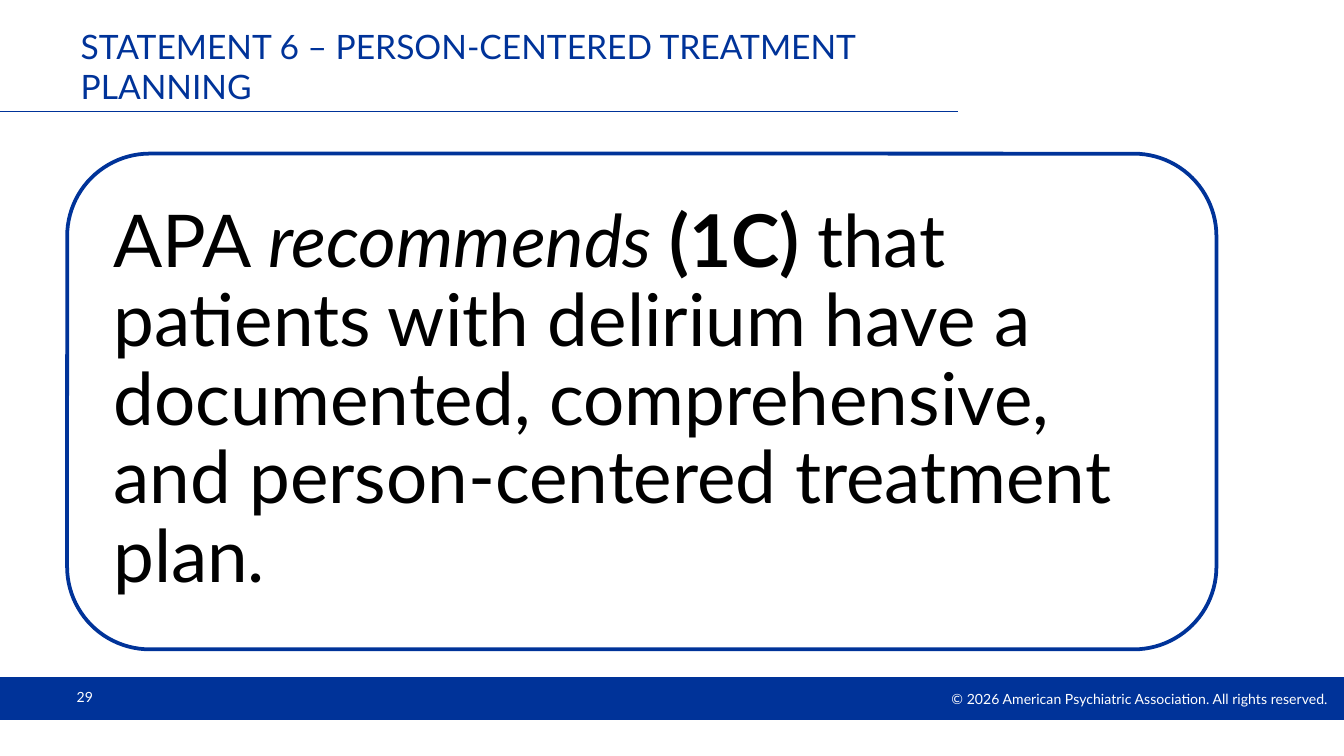
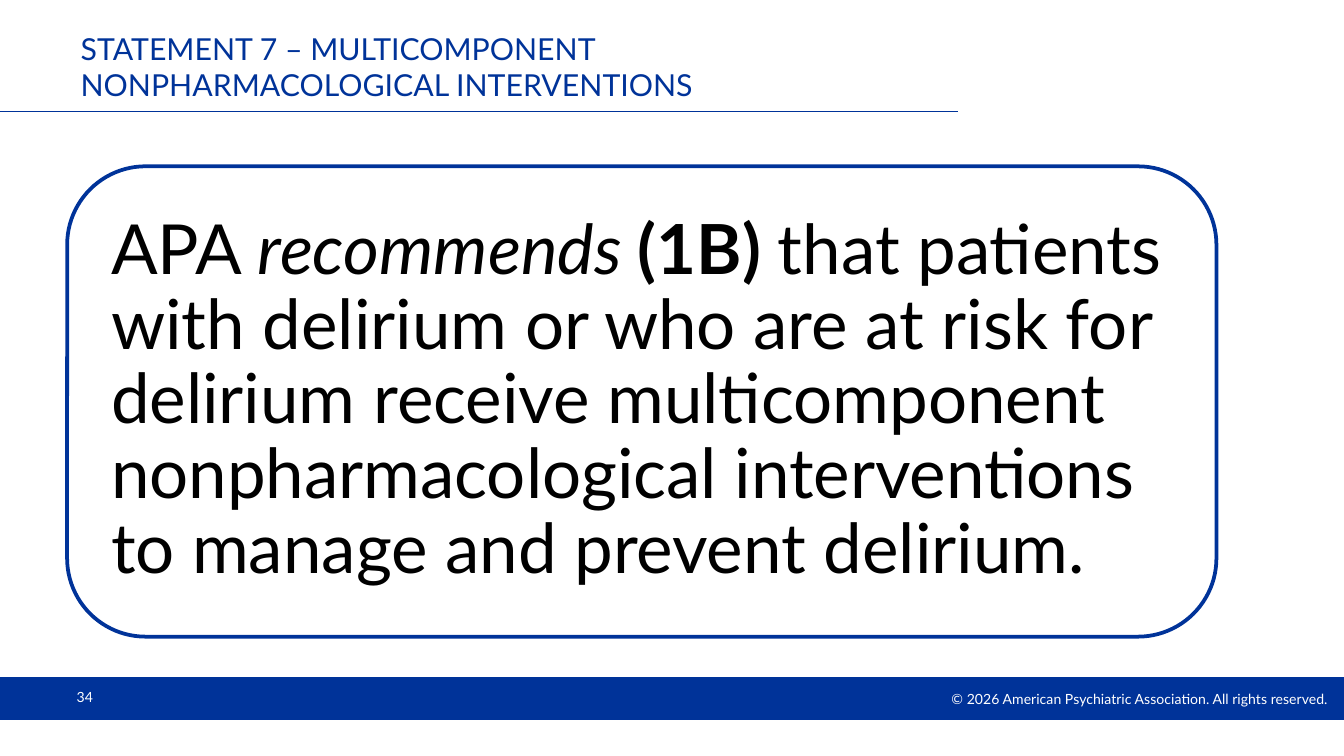
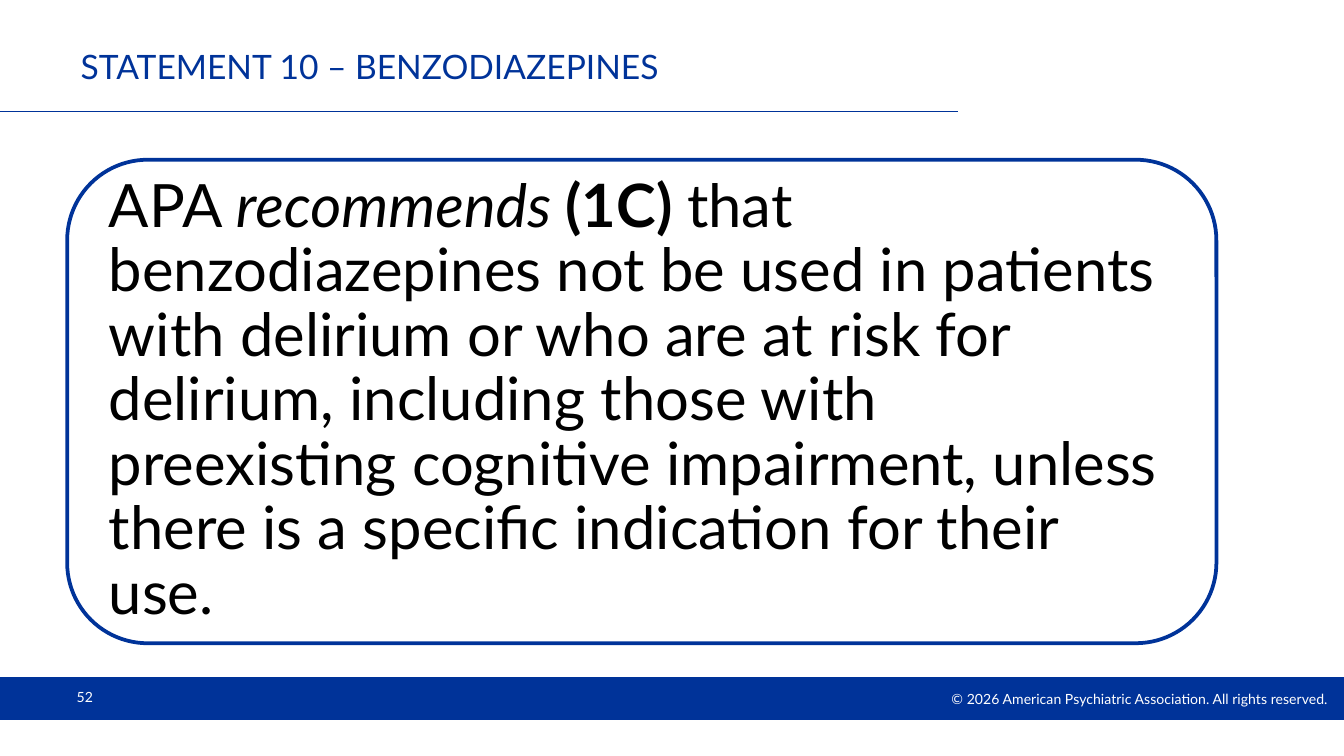
from pptx import Presentation
from pptx.dml.color import RGBColor
from pptx.enum.shapes import MSO_CONNECTOR, MSO_SHAPE
from pptx.enum.text import MSO_ANCHOR, MSO_AUTO_SIZE, PP_ALIGN
from pptx.oxml.ns import qn
from pptx.util import Cm, Pt
from lxml import etree

BLUE = RGBColor(0x00, 0x33, 0x99)
WHITE = RGBColor(0xFF, 0xFF, 0xFF)
BLACK = RGBColor(0x00, 0x00, 0x00)

RECT = MSO_SHAPE.RECTANGLE
ROUND_RECT = MSO_SHAPE.ROUNDED_RECTANGLE
STRAIGHT = MSO_CONNECTOR.STRAIGHT
MIDDLE = MSO_ANCHOR.MIDDLE
LEFT, RIGHT = PP_ALIGN.LEFT, PP_ALIGN.RIGHT
NO_FIT = MSO_AUTO_SIZE.NONE

FONT = "Lato"
TITLE_ONLY = 5
SLIDE_W, SLIDE_H = 25.4, 14.29
MARGIN = 1.27
TITLE_W = 16.84
BAND_TOP = 12.8
PANEL_W, PANEL_MIDDLE = 21.72, 7.59
CORNER_INSET = 0.049  # share of the panel height taken by its round corners
COPYRIGHT = "© 2026 American Psychiatric Association. All rights reserved."

# page, title, title size, panel height, text size, grade, recommendation
STATEMENTS = [
    (29, "STATEMENT 6 – PERSON-CENTERED TREATMENT PLANNING", 18, 9.37, 39, "(1C) ",
     "that patients with delirium have a documented, comprehensive, and "
     "person-centered treatment plan."),
    (34, "STATEMENT 7 – MULTICOMPONENT NONPHARMACOLOGICAL INTERVENTIONS",
     16.2, 8.89, 37, "(1B) ",
     "that patients with delirium or who are at risk for delirium receive "
     "multicomponent nonpharmacological interventions to manage and prevent "
     "delirium."),
    (52, "STATEMENT 10 – BENZODIAZEPINES", 18, 9.14, 32, "(1C) ",
     "that benzodiazepines not be used in patients with delirium or who are at "
     "risk for delirium, including those with preexisting cognitive impairment, "
     "unless there is a specific indication for their use."),
]


class Deck:
    def __init__(self):
        self.prs = Presentation()
        self.prs.slide_width, self.prs.slide_height = Cm(SLIDE_W), Cm(SLIDE_H)
        self.slide = None

    def new_slide(self, page):
        """Add a slide with the shared rule, band and footer texts."""
        self.slide = self.prs.slides.add_slide(self.prs.slide_layouts[TITLE_ONLY])
        shapes = self.slide.shapes
        band = self.shape(shapes, RECT, 0, BAND_TOP, SLIDE_W, 0.81)
        band.fill.solid()
        band.fill.fore_color.rgb = BLUE
        band.line.fill.background()
        self.rule(2.11, MARGIN + TITLE_W)
        tf = self.text_box(shapes, 14.3, 12.93, 11.1, 0.58, (0.25, 0.13, 0.31, 0.13))
        self.run(tf.paragraphs[0], COPYRIGHT, 7.5, WHITE)
        tf.paragraphs[0].alignment = RIGHT
        tf = self.text_box(shapes, MARGIN, BAND_TOP, 5.92, 0.76, (0.18, 0.1, 0.18, 0.1))
        self.run(tf.paragraphs[0], str(page), 7.5, WHITE)

    def shape(self, shapes, kind, x, y, w, h):
        sp = shapes.add_shape(kind, Cm(x), Cm(y), Cm(w), Cm(h))
        sp.shadow.inherit = False
        return sp

    def rule(self, y, length):
        line = self.slide.shapes.add_connector(STRAIGHT, 0, Cm(y), Cm(length), Cm(y))
        line.line.color.rgb = BLUE
        line.line.width = Pt(0.75)
        etree.SubElement(line._element.spPr, qn("a:effectLst"))

    def text_box(self, shapes, x, y, w, h, insets):
        tf = shapes.add_textbox(Cm(x), Cm(y), Cm(w), Cm(h)).text_frame
        tf.word_wrap = True
        tf.vertical_anchor = MIDDLE
        (tf.margin_left, tf.margin_top,
         tf.margin_right, tf.margin_bottom) = map(Cm, insets)
        return tf

    def run(self, p, text, size, color, bold=False, italic=False):
        r = p.add_run()
        r.text = text
        font = r.font
        font.name, font.size, font.bold, font.italic = FONT, Pt(size), bold, italic
        font.color.rgb = color

    def title(self, text, size):
        sp = self.slide.shapes.title
        sp.left, sp.top, sp.width, sp.height = map(Cm, (MARGIN, 0.64, TITLE_W, 1.22))
        tf = sp.text_frame
        tf.auto_size = NO_FIT
        tf.vertical_anchor = MIDDLE
        p = tf.paragraphs[0]
        p.alignment = LEFT
        self.run(p, text, size, BLUE)

    def recommendation(self, height, size, grade, text):
        """Add the outlined panel, with its text set inside the round corners."""
        shapes = self.slide.shapes.add_group_shape().shapes
        top = PANEL_MIDDLE - height / 2
        panel = self.shape(shapes, ROUND_RECT, MARGIN, top, PANEL_W, height)
        panel.fill.background()
        panel.line.color.rgb = BLUE
        panel.line.width = Pt(2)
        gap = height * CORNER_INSET
        tf = self.text_box(shapes, MARGIN + gap, top + gap, PANEL_W - 2 * gap,
                           height - 2 * gap, [size * 0.3 * 2.54 / 72] * 4)
        p = tf.paragraphs[0]
        p.line_spacing = 0.9
        self.run(p, "APA ", size, BLACK)
        self.run(p, "recommends ", size, BLACK, italic=True)
        self.run(p, grade, size, BLACK, bold=True)
        self.run(p, text, size, BLACK)


def main():
    deck = Deck()
    for page, title, title_size, height, size, grade, text in STATEMENTS:
        deck.new_slide(page)
        deck.title(title, title_size)
        deck.recommendation(height, size, grade, text)
    deck.prs.save("out.pptx")


if __name__ == "__main__":
    main()
